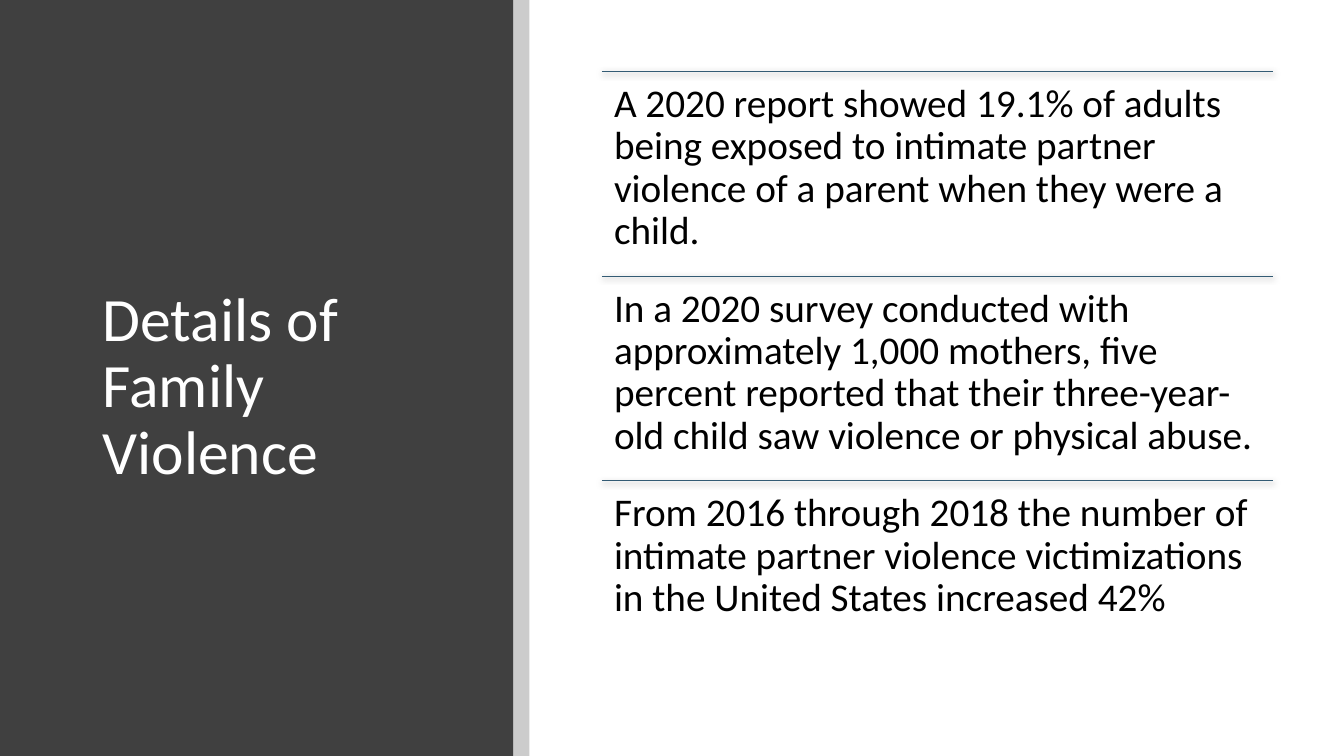
import pptx
import pptx.util
import pptx.dml.color
import pptx.enum.shapes
import pptx.enum.text
import pptx.oxml
import pptx.oxml.ns
from pptx.util import Inches

TITLE = "Details of Family Violence"
FACTS = [
    "A 2020 report showed 19.1% of adults being exposed to intimate partner "
    "violence of a parent when they were a child.",
    "In a 2020 survey conducted with approximately 1,000 mothers, five percent "
    "reported that their three-year-old child saw violence or physical abuse.",
    "From 2016 through 2018 the number of intimate partner violence "
    "victimizations in the United States increased 42%",
]
COLORS = {"panel": "404040", "strip": "000000", "title": "FFFFFF",
          "fact": "000000", "rule": "335B74"}
FONT = "Calibri"
PANEL_WIDTH, STRIP_WIDTH = 5.09, 0.16
FACT_LEFT, FACT_TOP, FACT_WIDTH, FACT_HEIGHT = 5.97, 0.71, 6.66, 2.03
DRAWING_NS = pptx.oxml.ns.nsdecls("a")
RULE_SHADOW = (
    f'<a:effectLst {DRAWING_NS}><a:outerShdw blurRad="57150" dist="19050" '
    'dir="5400000" algn="ctr" rotWithShape="0"><a:srgbClr val="000000">'
    '<a:alpha val="63000"/></a:srgbClr></a:outerShdw></a:effectLst>')


def rgb(name):
    return pptx.dml.color.RGBColor.from_string(COLORS[name])


def add_block(slide, left, width, color):
    """Add a full-height, borderless rectangle."""
    block = slide.shapes.add_shape(
        pptx.enum.shapes.MSO_SHAPE.RECTANGLE,
        Inches(left), 0, Inches(width), Inches(7.5))
    block.shadow.inherit = False
    block.fill.solid()
    block.fill.fore_color.rgb = rgb(color)
    block.line.fill.background()
    return block


def add_text(slide, bounds, text, size, color, margins, anchor):
    box = slide.shapes.add_textbox(*map(Inches, bounds))
    frame = box.text_frame
    frame.word_wrap = True
    frame.vertical_anchor = anchor
    frame.margin_left = frame.margin_right = Inches(margins[0])
    frame.margin_top = frame.margin_bottom = Inches(margins[1])
    frame.text = text
    para = frame.paragraphs[0]
    para.line_spacing = 0.9
    font = para.runs[0].font
    font.name, font.size = FONT, pptx.util.Pt(size)
    font.color.rgb = rgb(color)


def add_rule(slide, top):
    rule = slide.shapes.add_connector(
        pptx.enum.shapes.MSO_CONNECTOR.STRAIGHT, Inches(FACT_LEFT), Inches(top),
        Inches(FACT_LEFT + FACT_WIDTH), Inches(top))
    rule.line.color.rgb = rgb("rule")
    rule.line.width = pptx.util.Pt(0.5)
    rule.element.spPr.append(pptx.oxml.parse_xml(RULE_SHADOW))


def main():
    deck = pptx.Presentation()
    deck.slide_width, deck.slide_height = Inches(13.33), Inches(7.5)
    slide = deck.slides.add_slide(deck.slide_layouts[6])
    anchors = pptx.enum.text.MSO_ANCHOR

    add_block(slide, 0, PANEL_WIDTH, "panel")
    add_text(slide, (0.92, 0.89, 3.65, 5.91), TITLE, 44, "title",
             (0.1, 0.05), anchors.MIDDLE)
    strip = add_block(slide, PANEL_WIDTH, STRIP_WIDTH, "strip")
    strip_color = strip.element.spPr.find(".//" + pptx.oxml.ns.qn("a:srgbClr"))
    strip_color.append(pptx.oxml.parse_xml(f'<a:alpha {DRAWING_NS} val="20000"/>'))

    for index, fact in enumerate(FACTS):
        top = FACT_TOP + index * FACT_HEIGHT
        add_rule(slide, top)
        add_text(slide, (FACT_LEFT, top, FACT_WIDTH, FACT_HEIGHT), fact, 28,
                 "fact", (0.12, 0.12), anchors.TOP)
    deck.save("out.pptx")


if __name__ == "__main__":
    main()
